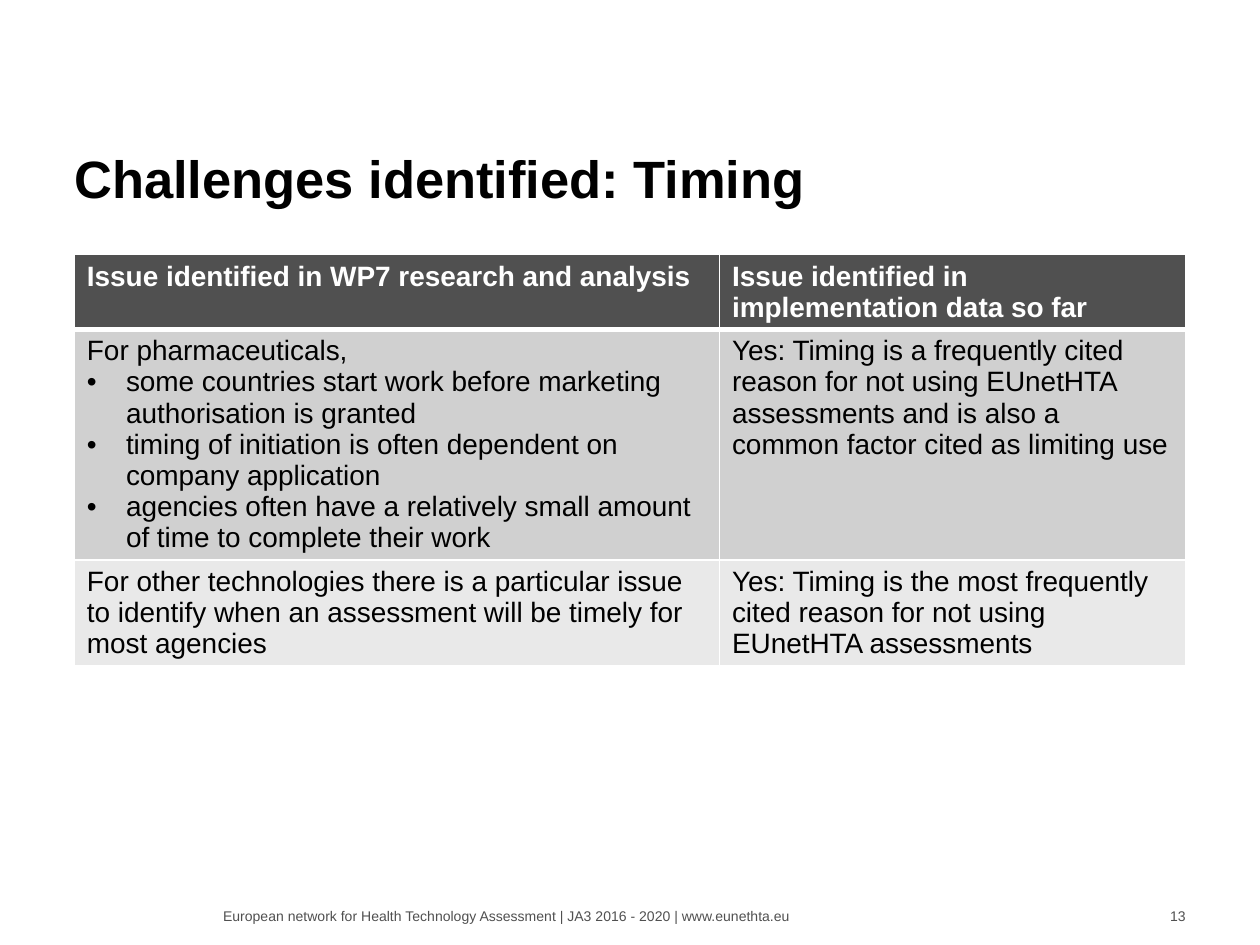
"""Build the slide on timing challenges."""
from dataclasses import dataclass

from lxml.etree import SubElement as Sub
from pptx import Presentation
from pptx.dml.color import RGBColor
from pptx.enum.text import MSO_ANCHOR as Anchor, PP_ALIGN as Align
from pptx.oxml.ns import qn
from pptx.util import Inches, Pt

BLACK = RGBColor(0x00, 0x00, 0x00)
WHITE = RGBColor(0xFF, 0xFF, 0xFF)
DARK = RGBColor(0x50, 0x50, 0x50)
MID = RGBColor(0xD0, 0xD0, 0xD0)
LIGHT = RGBColor(0xE9, 0xE9, 0xE9)
LEFT, WIDTH = 0.59, 8.82


@dataclass
class Line:
    text: str
    bullet: bool = False


@dataclass
class Row:
    height: float
    fill: RGBColor
    cells: list[list[Line]]
    head: bool = False


@dataclass
class Note:
    left: float
    width: float
    text: str
    align: Align


ROWS = [
    Row(0.59, DARK, [
        [Line("Issue identified in WP7 research and analysis")],
        [Line("Issue identified in implementation data so far")],
    ], head=True),
    Row(1.83, MID, [
        [
            Line("For pharmaceuticals,"),
            Line("some countries start work before marketing authorisation is granted", True),
            Line("timing of initiation is often dependent on company application", True),
            Line("agencies often have a relatively small amount of time to complete their work", True),
        ],
        [Line("Yes: Timing is a frequently cited reason for not using EUnetHTA "
              "assessments and is also a common factor cited as limiting use")],
    ]),
    Row(0.84, LIGHT, [
        [Line("For other technologies there is a particular issue to identify "
              "when an assessment will be timely for most agencies")],
        [Line("Yes: Timing is the most frequently cited reason for not using "
              "EUnetHTA assessments")],
    ]),
]
COLS = [5.12, 3.7]
NOTES = [
    Note(1.77, 4.69, "European network for Health Technology Assessment | "
         "JA3 2016 - 2020 | www.eunethta.eu", Align.LEFT),
    Note(8.74, 0.67, "13", Align.RIGHT),
]


def add_run(para, text: str, size: float, color: RGBColor, bold: bool = False) -> None:
    run = para.add_run()
    run.text = text
    font = run.font
    font.name, font.size, font.bold = "Arial", Pt(size), bold
    font.color.rgb = color


def clear_inset(frame) -> None:
    frame.margin_left = frame.margin_right = 0
    frame.margin_top = frame.margin_bottom = 0


def add_bullet(para) -> None:
    props = para._p.get_or_add_pPr()
    props.set("marL", str(Inches(0.31)))
    props.set("indent", str(-Inches(0.31)))
    Sub(props, qn("a:buFont"), typeface="Arial")
    Sub(props, qn("a:buChar"), char="•")


def add_edges(cell, top: float, bottom: float) -> None:
    props = cell._tc.get_or_add_tcPr()
    for side, size in zip("LRTB", (1, 1, top, bottom)):
        edge = Sub(props, qn(f"a:ln{side}"), w=str(Pt(size)))
        fill = Sub(edge, qn("a:solidFill"))
        Sub(fill, qn("a:srgbClr"), val=str(WHITE))


def fill_cell(cell, lines: list[Line], row: Row, top: float) -> None:
    add_edges(cell, top, 3 if row.head else 1)
    cell.fill.solid()
    cell.fill.fore_color.rgb = row.fill
    frame = cell.text_frame
    for i, line in enumerate(lines):
        para = frame.add_paragraph() if i else frame.paragraphs[0]
        if line.bullet:
            add_bullet(para)
        add_run(para, line.text, 16, WHITE if row.head else BLACK, row.head)


def add_grid(slide) -> None:
    high = sum(row.height for row in ROWS)
    grid = slide.shapes.add_table(len(ROWS), len(COLS), Inches(LEFT), Inches(2.02),
                                  Inches(WIDTH), Inches(high)).table
    for col, width in zip(grid.columns, COLS):
        col.width = Inches(width)
    for y, row in enumerate(ROWS):
        grid.rows[y].height = Inches(row.height)
        for x, lines in enumerate(row.cells):
            fill_cell(grid.cell(y, x), lines, row, 3 if y == 1 else 1)


def add_title(slide, text: str) -> None:
    title = slide.shapes.title
    title.left, title.top = Inches(LEFT), Inches(0.64)
    title.width, title.height = Inches(WIDTH), Inches(1.03)
    frame = title.text_frame
    clear_inset(frame)
    frame.vertical_anchor = Anchor.BOTTOM
    para = frame.paragraphs[0]
    para.alignment, para.line_spacing = Align.LEFT, 0.95
    add_run(para, text, 30, BLACK, True)


def add_note(slide, note: Note) -> None:
    box = slide.shapes.add_textbox(Inches(note.left), Inches(7.2),
                                   Inches(note.width), Inches(0.13))
    frame = box.text_frame
    frame.word_wrap = True
    clear_inset(frame)
    para = frame.paragraphs[0]
    para.alignment = note.align
    add_run(para, note.text, 8, DARK)


def main() -> None:
    deck = Presentation()
    deck.slide_width, deck.slide_height = Inches(10), Inches(7.5)
    slide = deck.slides.add_slide(deck.slide_layouts[5])
    add_title(slide, "Challenges identified: Timing")
    add_grid(slide)
    for note in NOTES:
        add_note(slide, note)
    deck.save("out.pptx")


if __name__ == "__main__":
    main()
